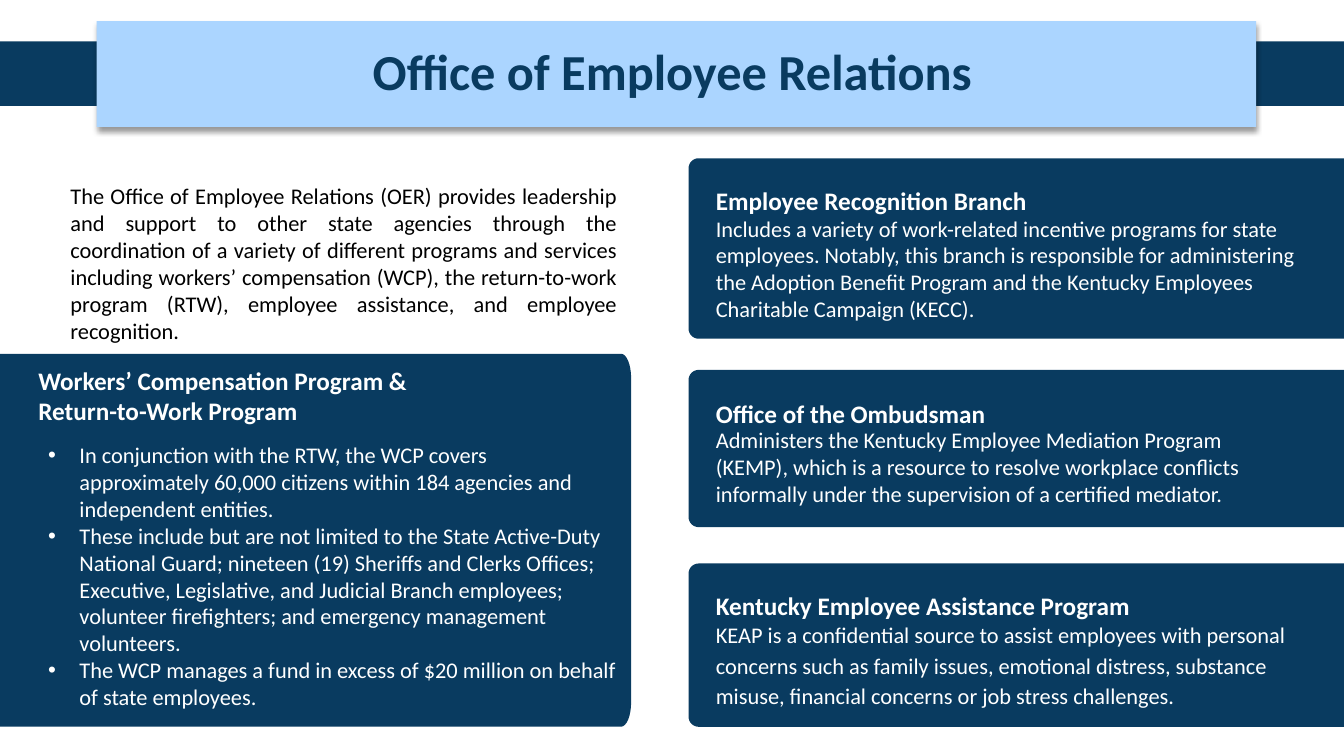
"""Build the Office of Employee Relations slide."""
import math
from dataclasses import dataclass

import lxml.etree
import pptx
import pptx.dml.color
import pptx.enum.shapes
import pptx.enum.text
import pptx.oxml.ns
import pptx.util

Inches = pptx.util.Inches
Pt = pptx.util.Pt
Align = pptx.enum.text.PP_ALIGN
qn = pptx.oxml.ns.qn


@dataclass(frozen=True)
class Theme:
    """Hold the colours, font and type sizes."""
    navy: str = "093B60"
    sky: str = "ABD5FF"
    white: str = "FFFFFF"
    black: str = "000000"
    font: str = "Calibri"
    title: int = 36
    head: int = 18
    body: int = 16


THEME = Theme()

INTRO = (
    "The Office of Employee Relations (OER) provides leadership and support to other "
    "state agencies through the coordination of a variety of different programs and "
    "services including workers’ compensation (WCP), the return-to-work program (RTW), "
    "employee assistance, and employee recognition."
)
COMP_HEAD = ["Workers’ Compensation Program &", "Return-to-Work Program"]
COMP_BODY = [
    "In conjunction with the RTW, the WCP covers approximately 60,000 citizens within "
    "184 agencies and independent entities.",
    "These include but are not limited to the State Active-Duty National Guard; nineteen "
    "(19) Sheriffs and Clerks Offices; Executive, Legislative, and Judicial Branch "
    "employees; volunteer firefighters; and emergency management volunteers.",
    "The WCP manages a fund in excess of $20 million on behalf of state employees.",
]
CARDS = [
    {"box": (6.83, 1.57, 7.37, 1.79), "head_y": 1.55, "body": (7.1, 2.13, 5.9, 1.08),
     "space": None, "head": "Employee Recognition Branch",
     "text": "Includes a variety of work-related incentive programs for state employees. "
             "Notably, this branch is responsible for administering the Adoption Benefit "
             "Program and the Kentucky Employees Charitable Campaign (KECC)."},
    {"box": (6.83, 3.67, 7.37, 1.56), "head_y": 3.67, "body": (7.1, 4.23, 5.75, 0.81),
     "space": None, "head": "Office of the Ombudsman",
     "text": "Administers the Kentucky Employee Mediation Program (KEMP), which is a "
             "resource to resolve workplace conflicts informally under the supervision of "
             "a certified mediator."},
    {"box": (6.83, 5.59, 7.06, 1.62), "head_y": 5.57, "body": (7.1, 6.13, 5.75, 0.91),
     "space": Pt(21.8), "head": "Kentucky Employee Assistance Program",
     "text": "KEAP is a confidential source to assist employees with personal concerns "
             "such as family issues, emotional distress, substance misuse, financial "
             "concerns or job stress challenges."},
]


def paint(shape, color):
    """Give a shape a plain fill with no line or shadow."""
    shape.fill.solid()
    shape.fill.fore_color.rgb = pptx.dml.color.RGBColor.from_string(color)
    shape.line.fill.background()
    shape.shadow.inherit = False


def add_bar(slide, box, color):
    """Add a plain rectangle."""
    kind = pptx.enum.shapes.MSO_SHAPE.RECTANGLE
    bar = slide.shapes.add_shape(kind, *map(Inches, box))
    paint(bar, color)
    return bar


def add_shade(shape):
    """Cast a soft shadow straight down."""
    effects = shape._element.spPr.find(qn("a:effectLst"))
    shade = lxml.etree.SubElement(
        effects, qn("a:outerShdw"), blurRad=str(Pt(4)), dist=str(Pt(3)),
        dir="5400000", algn="t", rotWithShape="0")
    color = lxml.etree.SubElement(shade, qn("a:srgbClr"), val=THEME.black)
    lxml.etree.SubElement(color, qn("a:alpha"), val="40000")


def add_panel(slide, box, rise=0.1, run=0.1):
    """Add a navy panel with oval corners of the given rise and run."""
    left, top, width, height = box
    steps = 8
    points = []
    for turn in range(4):
        mid_x = left + (width - run if turn in (0, 3) else run)
        mid_y = top + (height - rise if turn in (0, 1) else rise)
        for step in range(steps + 1):
            angle = math.pi / 2 * (turn + step / steps)
            points.append((Inches(mid_x + run * math.cos(angle)),
                           Inches(mid_y + rise * math.sin(angle))))
    pen = slide.shapes.build_freeform(*points[0])
    pen.add_line_segments(points[1:], close=True)
    paint(pen.convert_to_shape(), THEME.navy)


def add_dot(para):
    """Give a paragraph a hanging bullet."""
    props = para._p.get_or_add_pPr()
    props.set("marL", str(Inches(0.31)))
    props.set("indent", str(-Inches(0.31)))
    lxml.etree.SubElement(props, qn("a:buFont"), typeface="Arial")
    lxml.etree.SubElement(props, qn("a:buChar"), char="•")


def add_text(slide, box, lines, size, color=THEME.white, bold=False,
             align=Align.LEFT, space=None, inset=False, dots=False):
    """Add a text box with one paragraph for each line."""
    frame = slide.shapes.add_textbox(*map(Inches, box)).text_frame
    frame.word_wrap = True
    if not inset:
        frame.margin_left = frame.margin_right = 0
        frame.margin_top = frame.margin_bottom = 0
    for index, line in enumerate(lines):
        para = frame.paragraphs[0] if index == 0 else frame.add_paragraph()
        para.alignment = align
        if space is not None:
            para.line_spacing = space
        if dots:
            add_dot(para)
        run = para.add_run()
        run.text = line
        run.font.name = THEME.font
        run.font.size = Pt(size)
        run.font.bold = bold
        run.font.color.rgb = pptx.dml.color.RGBColor.from_string(color)
    return frame


def add_title(slide):
    """Add the title band and its text."""
    for left in (12.13, 0):
        add_bar(slide, (left, 0.41, 1.21, 0.64), THEME.navy)
    add_shade(add_bar(slide, (0.96, 0.21, 11.5, 1.05), THEME.sky))
    frame = add_text(slide, (0.92, 0.35, 11.5, 0.77), ["Office of Employee Relations"],
                     THEME.title, THEME.navy, bold=True, align=Align.CENTER,
                     space=0.9, inset=True)
    frame.vertical_anchor = pptx.enum.text.MSO_ANCHOR.MIDDLE


def add_card(slide, card):
    """Add a panel with a heading and a short text."""
    add_panel(slide, card["box"])
    add_text(slide, (7.1, card["head_y"], 6.33, 0.51), [card["head"]],
             THEME.head, bold=True, space=Pt(42.1))
    add_text(slide, card["body"], [card["text"]], THEME.body, space=card["space"])


def main():
    """Build and save the slide."""
    deck = pptx.Presentation()
    deck.slide_width, deck.slide_height = Inches(13.33), Inches(7.5)
    slide = deck.slides.add_slide(deck.slide_layouts[6])
    add_title(slide)
    add_text(slide, (0.6, 1.76, 5.62, 1.72), [INTRO], THEME.body, THEME.black,
             align=Align.JUSTIFY, inset=True)
    add_panel(slide, (-0.8, 3.51, 7.06, 3.7), rise=0.24)
    add_text(slide, (0.38, 3.62, 5.62, 0.61), COMP_HEAD, THEME.head, bold=True)
    add_text(slide, (0.38, 4.33, 5.85, 2.79), COMP_BODY, THEME.body,
             inset=True, dots=True)
    for card in CARDS:
        add_card(slide, card)
    deck.save("out.pptx")


if __name__ == "__main__":
    main()
